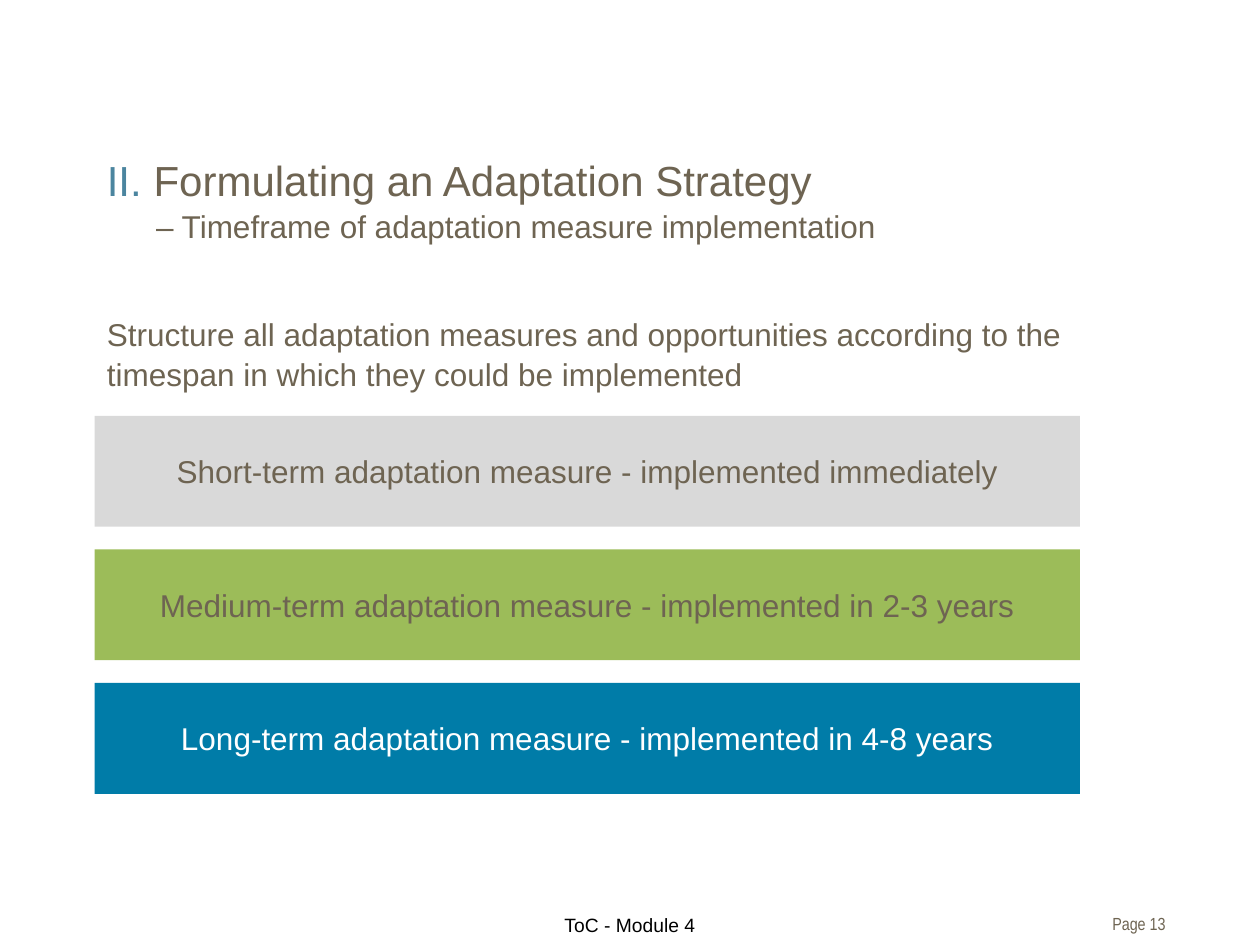
from typing import NamedTuple

from pptx import Presentation
from pptx.dml.color import RGBColor as Rgb
from pptx.enum.shapes import MSO_SHAPE as Kind
from pptx.enum.text import MSO_ANCHOR as Anchor, PP_ALIGN as Align
from pptx.util import Inches, Pt

HUES = {
    "text": "6E6452", "number": "4B859F", "black": "000000", "white": "FFFFFF",
    "grey": "D9D9D9", "green": "9CBC59", "blue": "007CA8",
}


class Run(NamedTuple):
    text: str
    size: int = 18
    hue: str = "text"
    font: str = "Arial"


class Bar(NamedTuple):
    text: str
    fill: str
    hue: str = "text"


BARS = [
    Bar("Short-term adaptation measure - implemented immediately", "grey"),
    Bar("Medium-term adaptation measure - implemented in 2-3 years", "green"),
    Bar("Long-term adaptation measure - implemented in 4-8 years", "blue", "white"),
]
LEFT, TOP, WIDE, HIGH, STEP = 0.75, 3.3, 7.82, 0.88, 1.06


def color(name: str) -> Rgb:
    return Rgb.from_string(HUES[name])


def add_run(para, item: Run) -> None:
    run = para.add_run()
    run.text = item.text
    font = run.font
    font.name, font.size = item.font, Pt(item.size)
    font.color.rgb = color(item.hue)


def add_text(slide, x: float, y: float, w: float, h: float,
             runs: list[Run], align=Align.LEFT, space: float = 1.0):
    box = slide.shapes.add_textbox(Inches(x), Inches(y), Inches(w), Inches(h))
    box.text_frame.word_wrap = True
    para = box.text_frame.paragraphs[0]
    para.alignment, para.line_spacing = align, space
    for item in runs:
        add_run(para, item)
    return box.text_frame


def add_bar(slide, y: float, bar: Bar) -> None:
    rect = slide.shapes.add_shape(
        Kind.RECTANGLE, Inches(LEFT), Inches(y), Inches(WIDE), Inches(HIGH))
    rect.shadow.inherit = False
    rect.fill.solid()
    rect.fill.fore_color.rgb = color(bar.fill)
    rect.line.fill.background()
    frame = rect.text_frame
    frame.word_wrap, frame.vertical_anchor = True, Anchor.MIDDLE
    para = frame.paragraphs[0]
    para.alignment = Align.CENTER
    add_run(para, Run(bar.text, hue=bar.hue))


def main() -> None:
    deck = Presentation()
    deck.slide_width, deck.slide_height = Inches(10), Inches(7.5)
    slide = deck.slides.add_slide(deck.slide_layouts[6])

    # Title with a hanging second line
    title = add_text(slide, LEFT, 1.16, 8.5, 0.98, [
        Run("II. ", 24, "number"),
        Run("Formulating an Adaptation Strategy", 24),
    ], space=1.05)
    head = title.paragraphs[0]
    props = head._p.get_or_add_pPr()
    props.set("marL", str(Inches(0.39)))
    props.set("indent", str(Inches(-0.39)))
    head.add_line_break()
    add_run(head, Run("– Timeframe of adaptation measure implementation"))

    # Introduction
    add_text(slide, LEFT, 2.44, 8.5, 0.8, [
        Run("Structure all adaptation measures and opportunities according to "
            "the timespan in which they could be implemented"),
    ], space=1.05)

    # Timeframe bars
    for i, bar in enumerate(BARS):
        add_bar(slide, TOP + i * STEP, bar)

    # Footer and page number
    add_text(slide, 3.13, 7.2, 3.74, 0.27,
             [Run("ToC - Module 4", 11, "black")], Align.CENTER)
    page = add_text(slide, 8.24, 7.2, 1.01, 0.27,
                    [Run("Page 13", 10, font="Arial Narrow")], Align.RIGHT)
    page.margin_right = 0

    deck.save("out.pptx")


if __name__ == "__main__":
    main()
